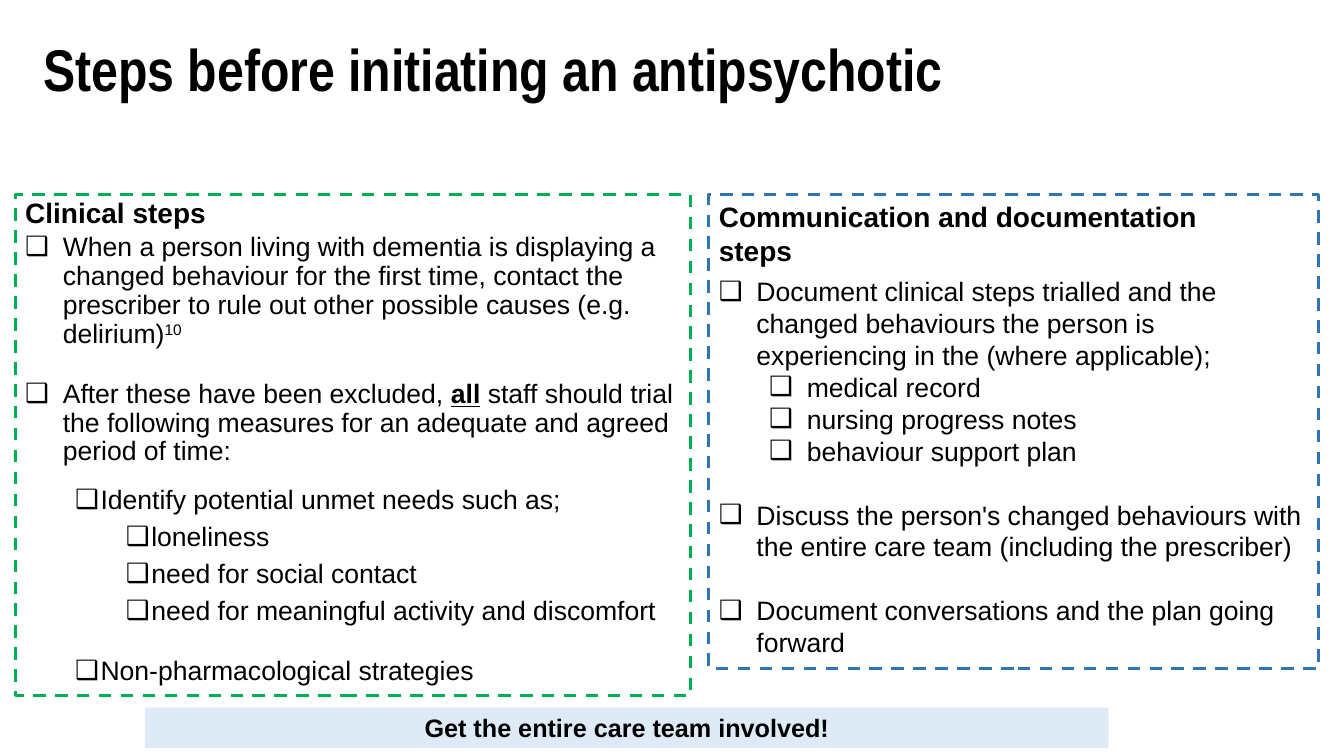
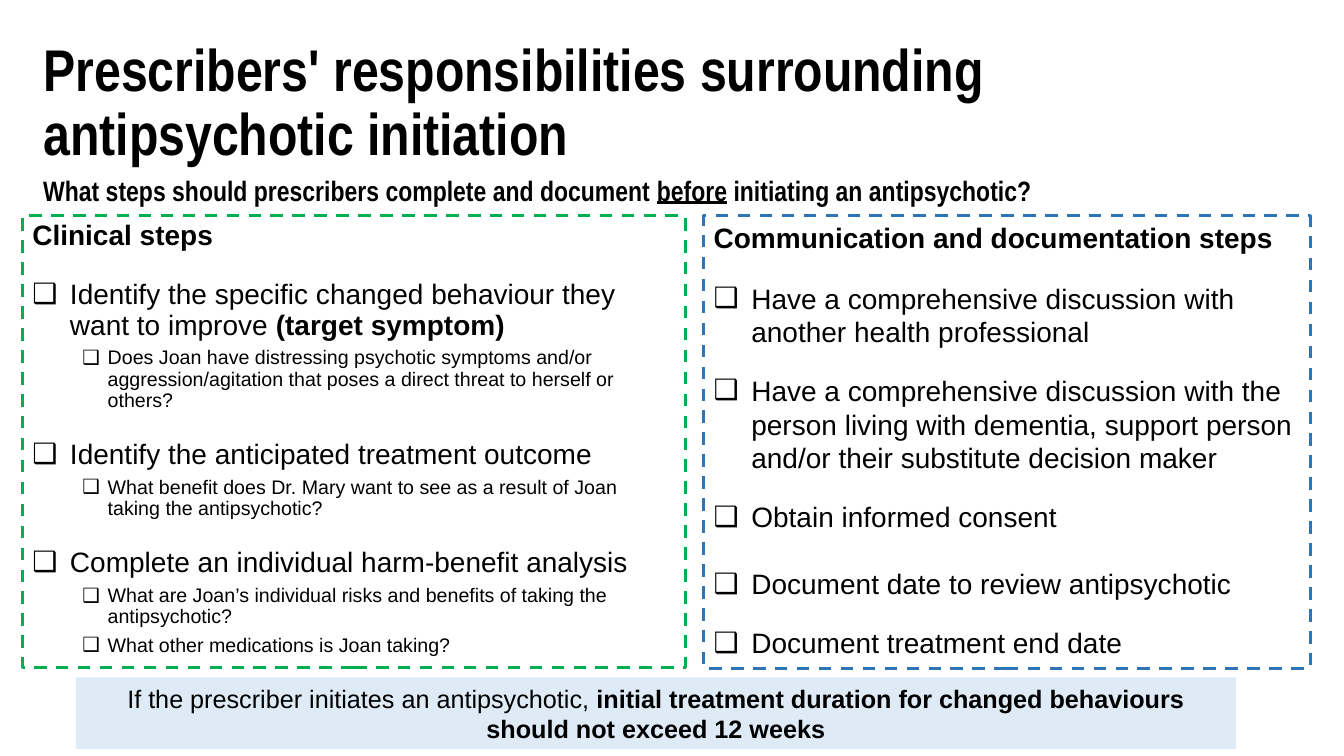
from dataclasses import dataclass
from typing import NamedTuple

from lxml import etree
from pptx import Presentation
from pptx import util as u
from pptx.dml import color
from pptx.enum import dml, shapes, text
from pptx.oxml import ns


# Theme: colours, fonts and type sizes
@dataclass(frozen=True)
class Theme:
    ink: str = "000000"
    clinical: str = "00B050"
    communication: str = "2E75B6"
    band: str = "DEEBF7"
    title_font: str = "Arial Narrow"
    body_font: str = "Arial"
    title_size: int = 42
    heading_size: int = 20
    dense_size: int = 19
    band_size: int = 18
    detail_size: int = 14
    tight: float = 0.9
    border: float = 2.25
    bullet: str = "❑"


THEME = Theme()


# Content model
class Area(NamedTuple):
    left: float
    top: float
    width: float
    height: float


class Span(NamedTuple):
    words: str
    bold: bool = False
    underline: bool = False
    raised: bool = False


class Indent(NamedTuple):
    level: int
    margin: float
    hanging: float


FLUSH = Indent(0, 0, 0)
ITEM = Indent(0, 0.95, 0.95)
SUB_ITEM = Indent(1, 1.9, 0.64)
SUB_SUB_ITEM = Indent(2, 3.18, 0.64)
WIDE_SUB_ITEM = Indent(1, 2.22, 0.95)


@dataclass(frozen=True)
class Line:
    spans: list[Span]
    size: int
    indent: Indent = FLUSH
    before: float = 0


@dataclass(frozen=True)
class Panel:
    area: Area
    border: str
    spacing: float
    lines: list[Line]


@dataclass(frozen=True)
class Page:
    title: str
    panels: list[Panel]
    band_area: Area
    band: list[Span]
    question: tuple[Span, ...] = ()


TITLE_AREA = Area(0.84, 0.91, 29.92, 2.06)
QUESTION_AREA = Area(0.84, 4.34, 29.01, 1.12)


def heading(words: str) -> Line:
    return Line([Span(words, bold=True)], THEME.heading_size)


def item(words: str, before: float, size: int = THEME.heading_size,
         indent: Indent = ITEM) -> Line:
    return Line([Span(words)], size, indent, before)


def dense(words: str, before: float = 0, indent: Indent = ITEM) -> Line:
    return item(words, before, THEME.dense_size, indent)


def detail(words: str) -> Line:
    return item(words, 5, THEME.detail_size, SUB_ITEM)


# Drawing
def place(box, area: Area) -> None:
    box.left, box.top, box.width, box.height = (u.Cm(side) for side in area)


def prepare_frame(box, anchor=text.MSO_ANCHOR.TOP):
    frame = box.text_frame
    frame.word_wrap = True
    frame.auto_size = text.MSO_AUTO_SIZE.NONE
    frame.vertical_anchor = anchor
    return frame


def add_spans(para, spans, size: float, font_name: str) -> None:
    for span in spans:
        run = para.add_run()
        run.text = span.words
        run.font.name = font_name
        run.font.size = u.Pt(size)
        run.font.bold = span.bold
        run.font.underline = span.underline
        run.font.color.rgb = color.RGBColor.from_string(THEME.ink)
        if span.raised:
            run.font._element.set("baseline", "30000")


def set_indent(para, indent: Indent) -> None:
    para.level = indent.level
    props = para._p.get_or_add_pPr()
    props.set("marL", str(u.Cm(indent.margin)))
    props.set("indent", str(-u.Cm(indent.hanging)))
    if indent.hanging:
        etree.SubElement(props, ns.qn("a:buChar")).set("char", THEME.bullet)
    else:
        etree.SubElement(props, ns.qn("a:buNone"))


def draw_headline(box, area: Area, spans, size: int) -> None:
    place(box, area)
    para = prepare_frame(box).paragraphs[0]
    para.alignment = text.PP_ALIGN.LEFT
    para.line_spacing = THEME.tight
    add_spans(para, spans, size, THEME.title_font)


def draw_panel(box, panel: Panel) -> None:
    place(box, panel.area)
    box.line.color.rgb = color.RGBColor.from_string(panel.border)
    box.line.width = u.Pt(THEME.border)
    box.line.dash_style = dml.MSO_LINE.DASH
    frame = prepare_frame(box)
    for number, line in enumerate(panel.lines):
        para = frame.add_paragraph() if number else frame.paragraphs[0]
        set_indent(para, line.indent)
        para.line_spacing = panel.spacing
        para.space_before = u.Pt(line.before)
        para.space_after = u.Pt(0)
        add_spans(para, line.spans, line.size, THEME.body_font)


def draw_band(slide, area: Area, spans: list[Span]) -> None:
    box = slide.shapes.add_shape(shapes.MSO_SHAPE.RECTANGLE,
                                 *(u.Cm(side) for side in area))
    box.shadow.inherit = False
    box.fill.solid()
    box.fill.fore_color.rgb = color.RGBColor.from_string(THEME.band)
    box.line.fill.background()
    para = prepare_frame(box, text.MSO_ANCHOR.MIDDLE).paragraphs[0]
    para.alignment = text.PP_ALIGN.CENTER
    add_spans(para, spans, THEME.band_size, THEME.body_font)


def draw_page(deck, page: Page) -> None:
    slide = deck.slides.add_slide(deck.slide_layouts.get_by_name("Two Content"))
    draw_headline(slide.shapes.title, TITLE_AREA,
                  [Span(page.title, bold=True)], THEME.title_size)
    if page.question:
        box = slide.shapes.add_textbox(0, 0, 0, 0)
        draw_headline(box, QUESTION_AREA, page.question, THEME.heading_size)
    for index, panel in enumerate(page.panels, start=1):
        draw_panel(slide.placeholders[index], panel)
    draw_band(slide, page.band_area, page.band)


# Slide 1: steps for all staff
STEPS = Page(
    title="Steps before initiating an antipsychotic",
    panels=[
        Panel(Area(0.38, 4.9, 17.02, 12.62), THEME.clinical, THEME.tight, [
            heading("Clinical steps"),
            Line([Span("When a person living with dementia is displaying a changed "
                       "behaviour for the first time, contact the prescriber to rule "
                       "out other possible causes (e.g. delirium)"),
                  Span("10", raised=True)], THEME.dense_size, ITEM, 3),
            Line([Span("After these have been excluded, "),
                  Span("all", bold=True, underline=True),
                  Span(" staff should trial the following measures for an adequate "
                       "and agreed period of time:")], THEME.dense_size, ITEM, 22.5),
            dense("Identify potential unmet needs such as;", 14, SUB_ITEM),
            dense("loneliness", 6, SUB_SUB_ITEM),
            dense("need for social contact", 6, SUB_SUB_ITEM),
            dense("need for meaningful activity and discomfort", 6, SUB_SUB_ITEM),
            dense("Non-pharmacological strategies", 22.5, SUB_ITEM),
        ]),
        Panel(Area(17.86, 4.9, 15.37, 11.94), THEME.communication, 1, [
            heading("Communication and documentation"),
            heading("steps"),
            dense("Document clinical steps trialled and the changed behaviours the "
                  "person is experiencing in the (where applicable);", 6),
            dense("medical record", indent=WIDE_SUB_ITEM),
            dense("nursing progress notes", indent=WIDE_SUB_ITEM),
            dense("behaviour support plan", indent=WIDE_SUB_ITEM),
            dense("Discuss the person's changed behaviours with the entire care team "
                  "(including the prescriber)", 22.8),
            dense("Document conversations and the plan going forward", 22.8),
        ]),
    ],
    band_area=Area(3.66, 17.83, 24.28, 1.02),
    band=[Span("Get the entire care team involved!", bold=True)],
)

# Slide 2: steps for prescribers
RESPONSIBILITIES = Page(
    title="Prescribers' responsibilities surrounding antipsychotic initiation",
    question=(
        Span("What steps should prescribers complete and document ", bold=True),
        Span("before", bold=True, underline=True),
        Span(" initiating an antipsychotic?", bold=True),
    ),
    panels=[
        Panel(Area(0.56, 5.44, 16.71, 11.38), THEME.clinical, THEME.tight, [
            heading("Clinical steps"),
            Line([Span("Identify the specific changed behaviour they want to improve "),
                  Span("(target symptom)", bold=True)], THEME.heading_size, ITEM, 21),
            detail("Does Joan have distressing psychotic symptoms and/or "
                   "aggression/agitation that poses a direct threat to herself or "
                   "others?"),
            item("Identify the anticipated treatment outcome", 20.5),
            detail("What benefit does Dr. Mary want to see as a result of Joan taking "
                   "the antipsychotic?"),
            item("Complete an individual harm-benefit analysis", 20.5),
            detail("What are Joan’s individual risks and benefits of taking the "
                   "antipsychotic?"),
            detail("What other medications is Joan taking?"),
        ]),
        Panel(Area(17.73, 5.44, 15.29, 11.4), THEME.communication, 1, [
            heading("Communication and documentation steps"),
            item("Have a comprehensive discussion with another health professional", 19),
            item("Have a comprehensive discussion with the person living with "
                 "dementia, support person and/or their substitute decision maker", 18),
            item("Obtain informed consent", 18),
            item("Document date to review antipsychotic", 24),
            item("Document treatment end date", 18),
        ]),
    ],
    band_area=Area(1.91, 17.07, 29.24, 1.8),
    band=[
        Span("If the prescriber initiates an antipsychotic, "),
        Span("initial treatment duration for changed behaviours should not exceed "
             "12 weeks", bold=True),
    ],
)


def main() -> None:
    deck = Presentation()
    deck.slide_width, deck.slide_height = u.Cm(33.87), u.Cm(19.05)
    for page in (STEPS, RESPONSIBILITIES):
        draw_page(deck, page)
    deck.save("out.pptx")


if __name__ == "__main__":
    main()
